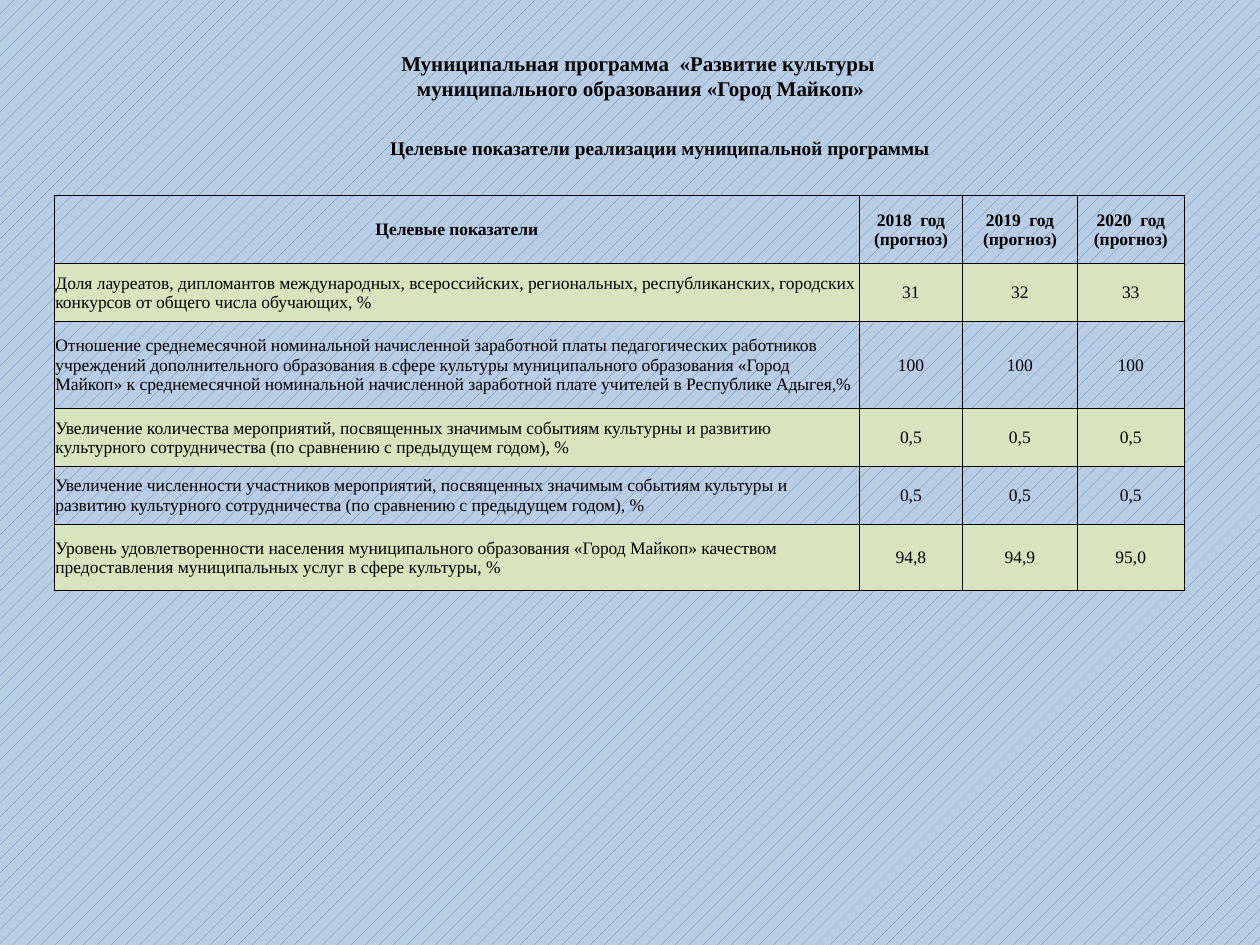
import pptx
import pptx.util
import pptx.dml.color
import pptx.enum.dml
import pptx.enum.text
import pptx.oxml
import pptx.oxml.ns
from pptx.util import Inches

Pt = pptx.util.Pt
RGB = pptx.dml.color.RGBColor.from_string
Align = pptx.enum.text.PP_ALIGN
Anchor = pptx.enum.text.MSO_ANCHOR

hues = {"ink": "000000", "band": "D7E4BD", "dots": "4F81BD", "back": "B9CDE5"}
pads = {"margin_left": Inches(0.01), "margin_right": Inches(0.01),
        "margin_top": Inches(0.01), "margin_bottom": 0}


def write(para, text, size, bold=True, align=Align.CENTER):
    para.alignment = align
    run = para.add_run()
    run.text = text
    looks = {"name": "Times New Roman", "size": Pt(size), "bold": bold}
    for key, value in looks.items():
        setattr(run.font, key, value)
    run.font.color.rgb = RGB(hues["ink"])


def grid(left, top, cols, rows, edge, anchor):
    """Add a plain table with equal cell margins; edge is the XML fill of its borders."""
    frame = slide.shapes.add_table(len(rows), len(cols), Inches(left), Inches(top),
                                   Inches(sum(cols)), Inches(sum(rows)))
    table = frame.table
    table.first_row = table.horz_banding = False
    for col, width in zip(table.columns, cols):
        col.width = Inches(width)
    for row, height in zip(table.rows, rows):
        row.height = Inches(height)
    for cell in table.iter_cells():
        for key, value in {**pads, "vertical_anchor": anchor}.items():
            setattr(cell, key, value)
        cell.fill.background()
        props = cell._tc.get_or_add_tcPr()
        for spot, side in enumerate("LRTB"):
            props.insert(spot, pptx.oxml.parse_xml(
                f'<a:ln{side} {pptx.oxml.ns.nsdecls("a")} w="{Pt(0.5)}">{edge}</a:ln{side}>'))
    return table


deck = pptx.Presentation()
deck.slide_width, deck.slide_height = Inches(10), Inches(7.5)
slide = deck.slides.add_slide(deck.slide_layouts[6])

fill = slide.background.fill
fill.patterned()
fill.pattern = pptx.enum.dml.MSO_PATTERN.PERCENT_10
fill.fore_color.rgb = RGB(hues["dots"])
fill.back_color.rgb = RGB(hues["back"])

# Title
box = slide.shapes.add_textbox(Inches(0.34), Inches(0.35), Inches(9.45), Inches(0.71))
frame = box.text_frame
frame.word_wrap = True
write(frame.paragraphs[0], "Муниципальная программа  «Развитие культуры", 12)
write(frame.add_paragraph(), " муниципального образования «Город Майкоп»", 12)

# Heading above the table
head = grid(1.46, 1.06, [7.56], [0.21], "<a:noFill/>", Anchor.BOTTOM)
write(head.cell(0, 0).text_frame.paragraphs[0],
      "Целевые показатели реализации муниципальной программы", 11)

# Targets by year
data = [
    ["Целевые показатели"] + [f"{year}  год (прогноз)" for year in (2018, 2019, 2020)],
    ["Доля лауреатов, дипломантов международных, всероссийских, региональных, "
     "республиканских, городских конкурсов от общего числа обучающих, %",
     "31", "32", "33"],
    ["Отношение среднемесячной номинальной начисленной заработной платы педагогических "
     "работников учреждений дополнительного образования в сфере культуры муниципального "
     "образования «Город Майкоп» к среднемесячной номинальной начисленной заработной "
     "плате учителей в Республике Адыгея,%",
     "100", "100", "100"],
    ["Увеличение количества мероприятий, посвященных значимым событиям культурны и "
     "развитию культурного сотрудничества (по сравнению с предыдущем годом), %",
     "0,5", "0,5", "0,5"],
    ["Увеличение численности участников мероприятий, посвященных значимым событиям "
     "культуры и развитию культурного сотрудничества (по сравнению с предыдущем годом), %",
     "0,5", "0,5", "0,5"],
    ["Уровень удовлетворенности населения муниципального образования «Город Майкоп» "
     "качеством предоставления муниципальных услуг в сфере культуры, %",
     "94,8", "94,9", "95,0"],
]
edge = f'<a:solidFill><a:srgbClr val="{hues["ink"]}"/></a:solidFill>'
table = grid(0.43, 1.55, [6.39, 0.82, 0.91, 0.85],
             [0.54, 0.46, 0.69, 0.46, 0.46, 0.53], edge, Anchor.MIDDLE)
for r, row in enumerate(data):
    for c, text in enumerate(row):
        cell = table.cell(r, c)
        align = Align.LEFT if r and not c else Align.CENTER
        write(cell.text_frame.paragraphs[0], text, 10, r == 0, align)
        if r % 2:
            cell.fill.solid()
            cell.fill.fore_color.rgb = RGB(hues["band"])

deck.save("out.pptx")
